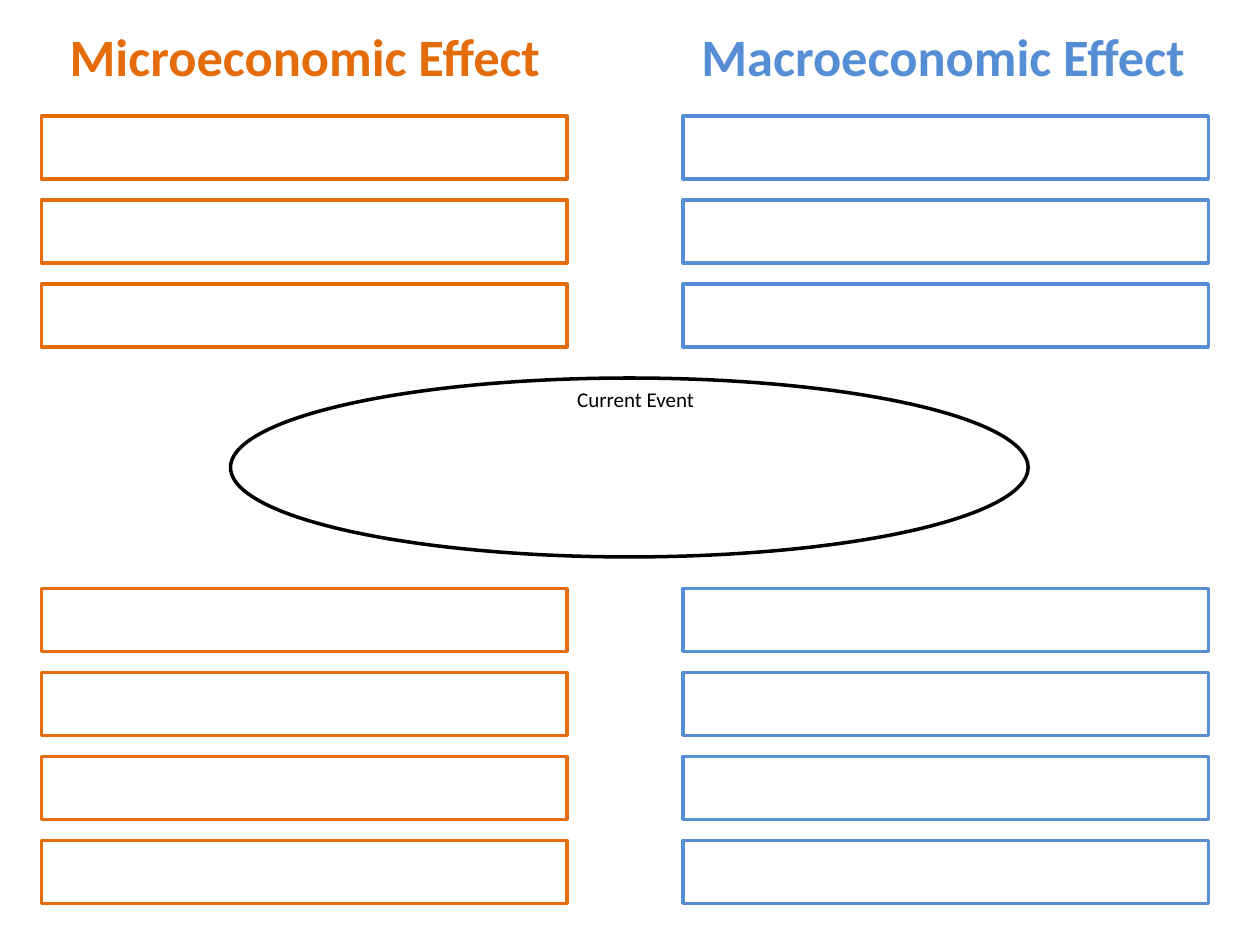
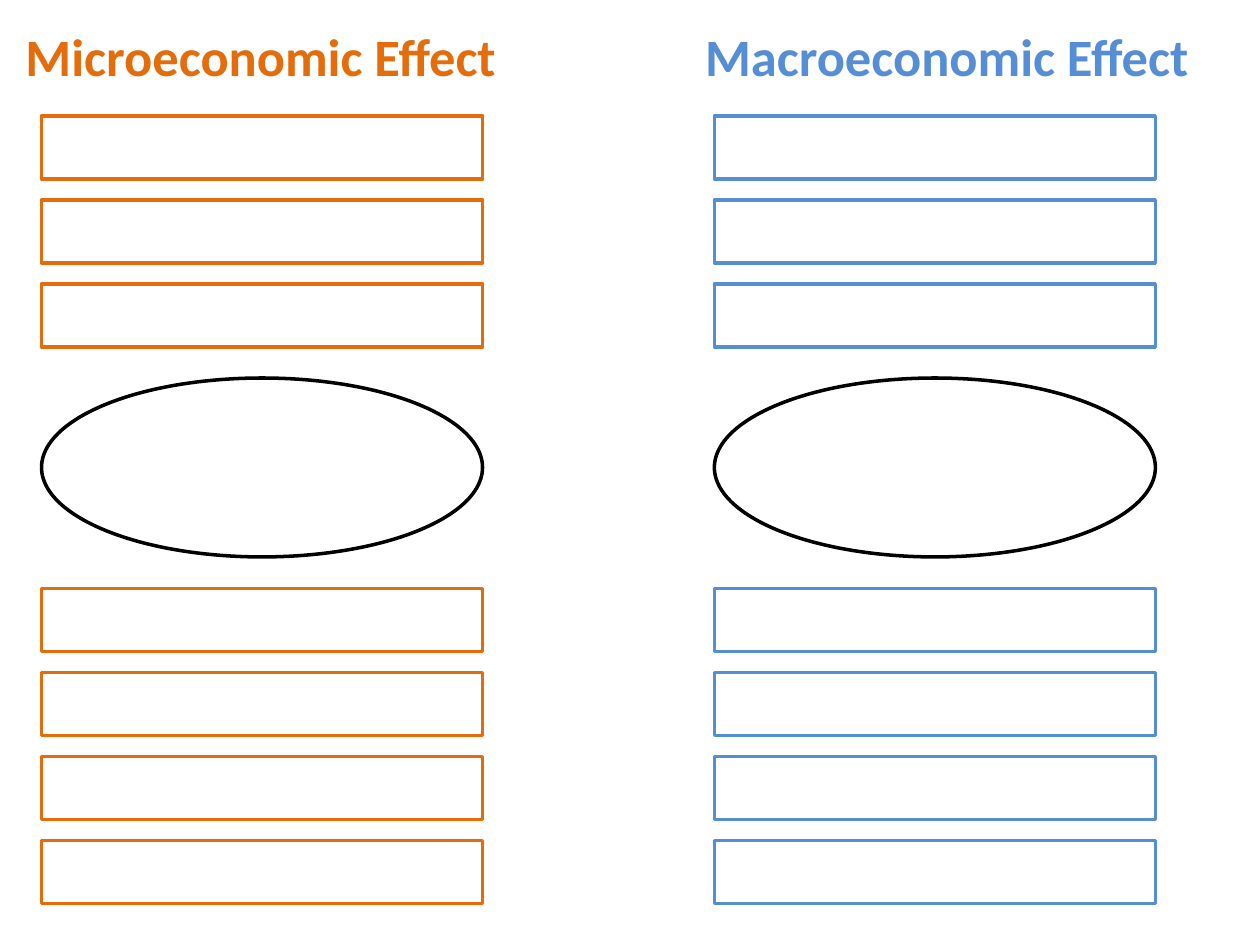
from dataclasses import dataclass
from pptx import Presentation
from pptx.dml.color import RGBColor
from pptx.enum.shapes import MSO_SHAPE
from pptx.enum.text import MSO_ANCHOR, MSO_AUTO_SIZE, PP_ALIGN
from pptx.util import Inches, Pt


@dataclass(frozen=True)
class Theme:
    micro: RGBColor = RGBColor(0xE4, 0x6C, 0x0A)
    macro: RGBColor = RGBColor(0x55, 0x8E, 0xD5)
    ink: RGBColor = RGBColor(0, 0, 0)
    face: str = "Calibri"
    title: Pt = Pt(30)
    note: Pt = Pt(12)
    rule: Pt = Pt(2)


theme = Theme()


def frame(slide, kind, left, top, width, height, color=None):
    shape = slide.shapes.add_shape(
        kind, Inches(left), Inches(top), Inches(width), Inches(height))
    shape.shadow.inherit = False
    shape.fill.background()
    if color is None:
        shape.line.fill.background()
    else:
        shape.line.color.rgb = color
        shape.line.width = theme.rule
    return shape


def write(shape, text, size, color, bold=False):
    para = shape.text_frame.paragraphs[0]
    para.text = text
    para.alignment = PP_ALIGN.CENTER
    para.font.name = theme.face
    para.font.size = size
    para.font.bold = bold
    para.font.color.rgb = color


deck = Presentation()
deck.slide_width = Inches(10)
deck.slide_height = Inches(7.5)

micro = ("Microeconomic Effect", theme.micro, 3.98)
macro = ("Macroeconomic Effect", theme.macro, 4.19)
pages = [
    {"width": 4.17, "sides": [(micro, 0.33, 0.43), (macro, 5.42, 5.39)],
     "ovals": [(1.83, 6.33)], "note": "Current Event"},
    {"width": 3.5, "sides": [(micro, 0.33, 0.08), (macro, 5.67, 5.42)],
     "ovals": [(0.33, 3.5), (5.67, 3.5)], "note": None},
]
pitch = 2 / 3
rows = [0.92 + pitch * i for i in range(3)] + [4.67 + pitch * i for i in range(4)]

for page in pages:
    slide = deck.slides.add_slide(deck.slide_layouts[6])
    for left, width in page["ovals"]:
        frame(slide, MSO_SHAPE.OVAL, left, 3, width, 1.42, theme.ink)

    for (name, color, wide), left, start in page["sides"]:
        title = slide.shapes.add_textbox(
            Inches(start), Inches(0.14), Inches(wide), Inches(0.61))
        title.text_frame.word_wrap = False
        title.text_frame.auto_size = MSO_AUTO_SIZE.SHAPE_TO_FIT_TEXT
        write(title, name, theme.title, color, True)
        for top in rows:
            frame(slide, MSO_SHAPE.RECTANGLE, left, top, page["width"], 0.5, color)

    if page["note"]:
        note = frame(slide, MSO_SHAPE.LINE_CALLOUT_2, 4.42, 3, 1.25, 0.33)
        for i, value in enumerate((0.48, -0.01, 0.46, 0, 0.44, 0.01)):
            note.adjustments[i] = value
        note.text_frame.vertical_anchor = MSO_ANCHOR.MIDDLE
        write(note, page["note"], theme.note, theme.ink)

deck.save("out.pptx")
